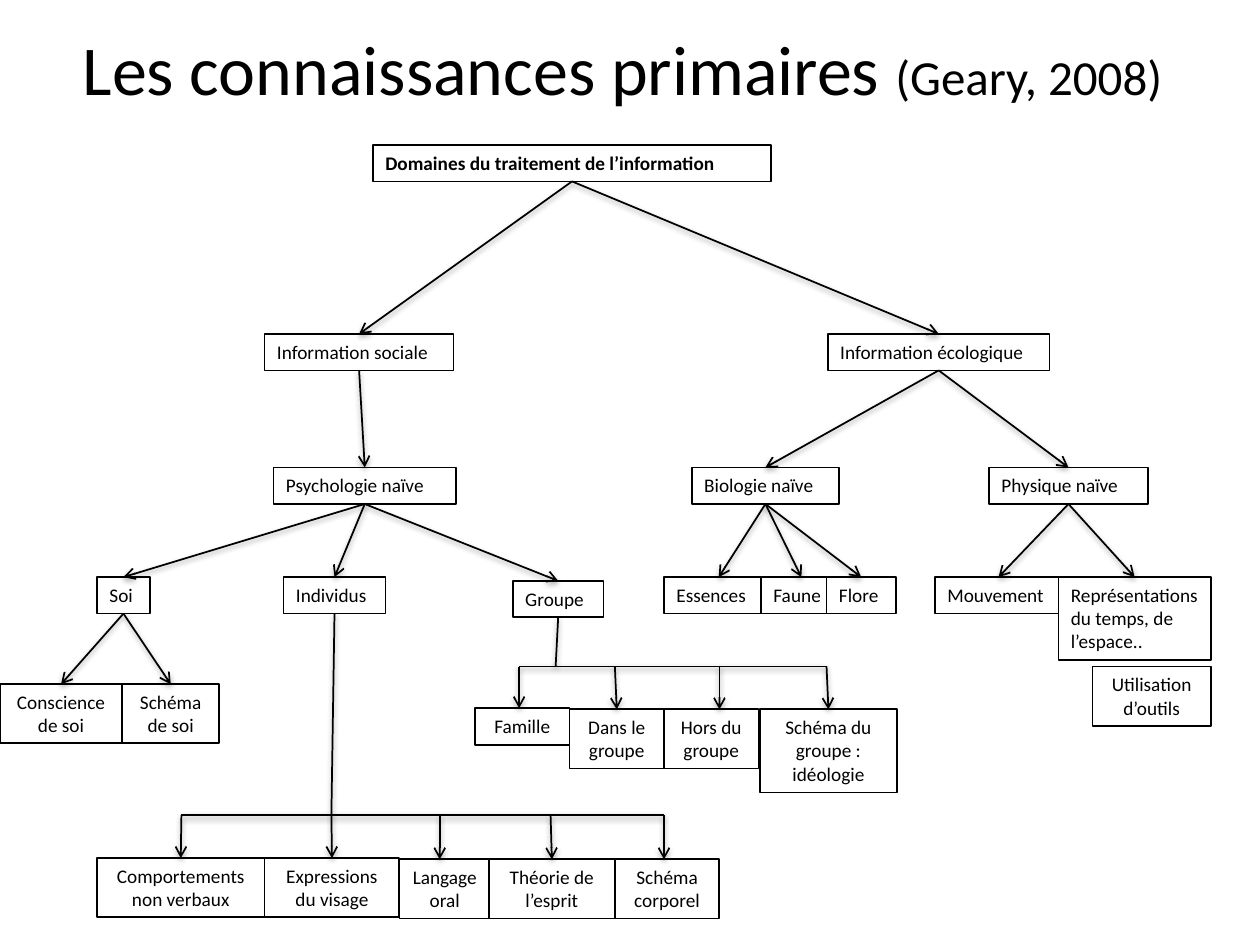
from pptx import Presentation
from pptx.dml.color import RGBColor
from pptx.enum.shapes import MSO_CONNECTOR as Conn
from pptx.enum.text import MSO_ANCHOR as Anchor, MSO_AUTO_SIZE as Auto, PP_ALIGN as Align
from pptx.oxml.ns import qn
from pptx.util import Inches, Pt
from lxml.etree import SubElement

INK, PAPER = "000000", "FFFFFF"
TOP, BOTTOM = 0, 2
HIGH = {1: 0.29, 2: 0.47, 3: 0.66}  # box height by number of text lines
color = RGBColor.from_string

deck = Presentation()
deck.slide_width, deck.slide_height = Inches(10), Inches(7.5)
slide = deck.slides.add_slide(deck.slide_layouts[5])


def write(para, text, size, bold=False):
    run = para.add_run()
    run.text = text
    run.font.name, run.font.size, run.font.bold = "Calibri", Pt(size), bold
    run.font.color.rgb = color(INK)


def join(x1, y1, x2, y2, head=True):
    """Draw a straight line, in inches, with an arrowhead at its end if asked."""
    line = slide.shapes.add_connector(
        Conn.STRAIGHT, Inches(x1), Inches(y1), Inches(x2), Inches(y2))
    line.line.width = Pt(1)
    line.line.color.rgb = color(INK)
    if head:
        SubElement(line._element.spPr.find(qn("a:ln")), qn("a:tailEnd"), type="arrow")
    return line


title = slide.shapes.title
title.left, title.top, title.width, title.height = 0, 0, Inches(9.88), Inches(1.07)
frame = title.text_frame
frame.auto_size, frame.vertical_anchor = Auto.NONE, Anchor.MIDDLE
para = frame.paragraphs[0]
para.alignment = Align.CENTER
write(para, "Les connaissances primaires ", 40)
write(para, "(Geary, 2008)", 28)

# One row of the tree per entry: top, then key, left, width, lines, centred, text
rows = [
    (1.15, [("root", 2.96, 3.16, 1, False, "Domaines du traitement de l’information")]),
    (2.65, [("social", 2.1, 1.5, 1, False, "Information sociale"),
            ("eco", 6.57, 1.76, 1, False, "Information écologique")]),
    (3.71, [("psy", 2.17, 1.45, 1, False, "Psychologie naïve"),
            ("bio", 5.49, 1.17, 1, False, "Biologie naïve"),
            ("phys", 7.85, 1.26, 1, False, "Physique naïve")]),
    (4.58, [("self", 0.77, 0.42, 1, False, "Soi"),
            ("person", 2.25, 0.81, 1, False, "Individus"),
            ("essence", 5.27, 0.87, 1, False, "Essences"),
            ("fauna", 6.04, 0.64, 1, False, "Faune"),
            ("flora", 6.56, 0.55, 1, False, "Flore"),
            ("motion", 7.42, 1.01, 1, False, "Mouvement"),
            ("space", 8.4, 1.21, 3, False, "Représentations du temps, de l’espace..")]),
    (4.61, [("group", 4.07, 0.72, 1, False, "Groupe")]),
    (5.29, [("tools", 8.67, 0.94, 2, True, "Utilisation d’outils")]),
    (5.43, [("aware", 0, 0.97, 2, True, "Conscience de soi"),
            ("schema", 0.97, 0.77, 2, True, "Schéma de soi")]),
    (5.62, [("family", 3.77, 0.75, 1, True, "Famille")]),
    (5.63, [("inside", 4.52, 0.75, 2, True, "Dans le groupe"),
            ("outside", 5.27, 0.75, 2, True, "Hors du groupe"),
            ("ideas", 6.03, 1.09, 3, True, "Schéma du groupe : idéologie")]),
    (6.81, [("conduct", 0.77, 1.33, 2, True, "Comportements non verbaux"),
            ("face", 2.1, 1.07, 2, True, "Expressions du visage")]),
    (6.82, [("speech", 3.17, 0.72, 2, True, "Langage\noral"),
            ("mind", 3.88, 1, 2, True, "Théorie de l’esprit"),
            ("body", 4.88, 0.83, 2, True, "Schéma corporel")]),
]
boxes = {}
for top, row in rows:
    for key, left, width, lines, centred, text in row:
        box = slide.shapes.add_textbox(
            Inches(left), Inches(top), Inches(width), Inches(HIGH[lines]))
        box.fill.solid()
        box.fill.fore_color.rgb = color(PAPER)
        box.line.width = Pt(1)
        box.line.color.rgb = color(INK)
        frame = box.text_frame
        frame.auto_size = Auto.SHAPE_TO_FIT_TEXT
        frame.word_wrap = (centred or lines > 1) and "\n" not in text
        for i, part in enumerate(text.split("\n")):
            para = frame.add_paragraph() if i else frame.paragraphs[0]
            para.alignment = Align.CENTER if centred else Align.LEFT
            write(para, part, 11, key == "root")
        boxes[key] = box

tree = {
    "root": ["social", "eco"],
    "social": ["psy"],
    "eco": ["bio", "phys"],
    "psy": ["self", "person", "group"],
    "self": ["aware", "schema"],
    "bio": ["essence", "fauna", "flora"],
    "phys": ["motion", "space"],
}
for source, kids in tree.items():
    for kid in kids:
        line = join(0, 0, 1, 1)
        line.begin_connect(boxes[source], BOTTOM)
        line.end_connect(boxes[kid], TOP)

# Combs: parent, stem x at its foot, bar y, then the x of the drop to each child
combs = [
    ("person", 2.63, 6.47, {"conduct": 1.44, "face": 2.63, "speech": 3.49,
                            "mind": 4.37, "body": 5.27}),
    ("group", 4.41, 5.29, {"family": 4.12, "inside": 4.88, "outside": 5.71,
                           "ideas": 6.56}),
]
for source, foot, bar, drops in combs:
    join(foot, bar - 0.1, foot, bar, False).begin_connect(boxes[source], BOTTOM)
    xs = list(drops.values())
    join(xs[0], bar, xs[-1], bar, False)
    for kid, x in drops.items():
        box = boxes[kid]
        drop = join(x, bar, x, box.top.inches)
        if abs(box.left + box.width / 2 - Inches(x)) < Inches(0.02):
            drop.end_connect(box, TOP)

deck.save("out.pptx")
